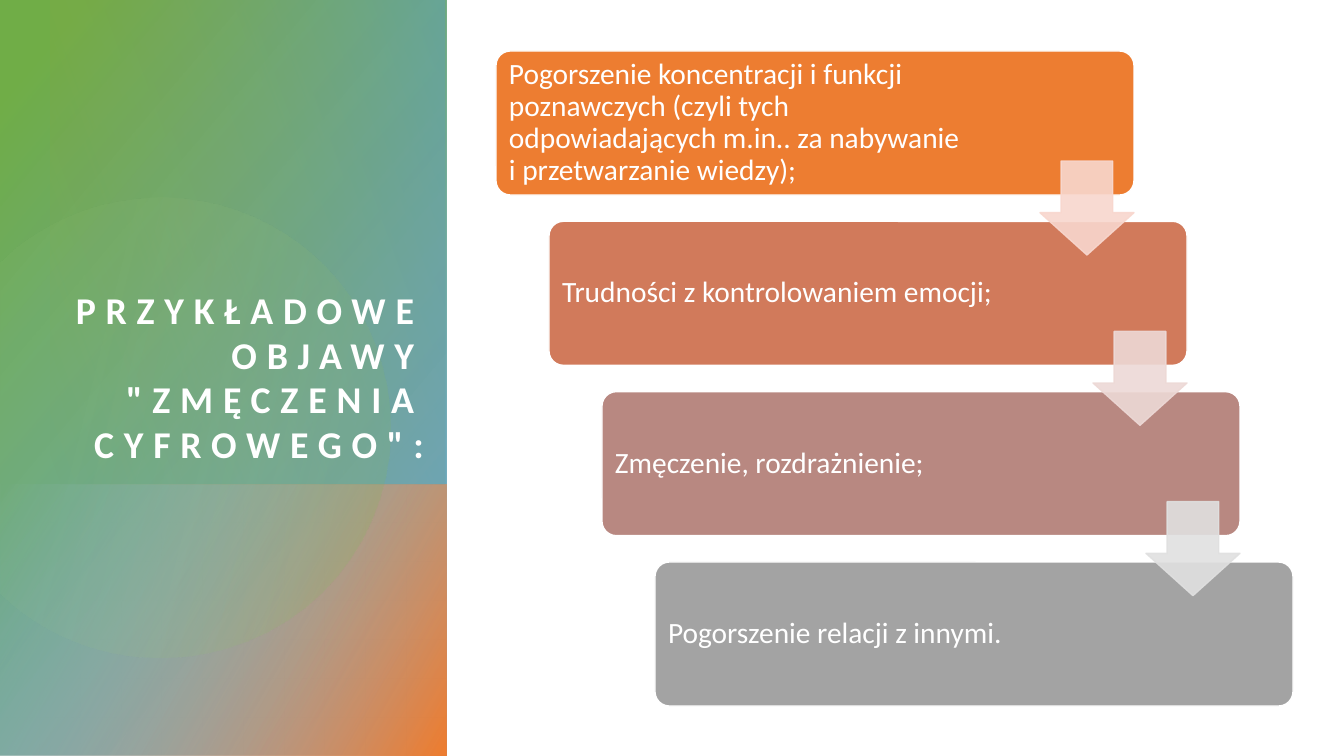
"""Build the slide on symptoms of digital fatigue: a gradient title panel and a staircase of four steps."""
import math

from pptx import Presentation
from pptx import util as u
from pptx.dml.color import RGBColor
from pptx.enum import shapes, text
from pptx.oxml import parse_xml
from pptx.oxml.ns import nsdecls, qn

WHITE = RGBColor(0xFF, 0xFF, 0xFF)
GREEN = RGBColor(0x70, 0xAD, 0x47)
PALE_GREEN = RGBColor(0xA9, 0xD1, 0x8E)
BLUE = RGBColor(0x5B, 0x9B, 0xD5)
PALE_BLUE = RGBColor(0x9D, 0xC3, 0xE6)
GOLD = RGBColor(0xCF, 0x9B, 0x00)
ORANGE = RGBColor(0xED, 0x7D, 0x31)
TERRACOTTA = RGBColor(0xD1, 0x7A, 0x5B)
ROSE = RGBColor(0xB8, 0x88, 0x81)
GREY = RGBColor(0xA3, 0xA3, 0xA3)
PALE_ORANGE = RGBColor(0xF8, 0xD7, 0xCE)
PALE_ROSE = RGBColor(0xED, 0xD9, 0xD6)
PALE_GREY = RGBColor(0xE0, 0xE0, 0xE0)

FONT = "Calibri"
TITLE = 'PRZYKŁADOWE OBJAWY "ZMĘCZENIA CYFROWEGO":'
TITLE_BOX = (50, 96, 374, 371)

# Each step: text, fill, text width, colour of the arrow to the next step
STEPS = [
    ("Pogorszenie koncentracji i funkcji poznawczych (czyli tych odpowiadających "
     "m.in.. za nabywanie i przetwarzanie wiedzy);", ORANGE, 471, PALE_ORANGE),
    ("Trudności z kontrolowaniem emocji;", TERRACOTTA, 483, PALE_ROSE),
    ("Zmęczenie, rozdrażnienie;", ROSE, 484, PALE_GREY),
    ("Pogorszenie relacji z innymi.", GREY, 483, None),
]
FIRST_STEP, LAST_STEP = (496, 51), (655, 562)
STEP_SIZE = (638, 144)
TEXT_MARGIN = 4
ARROW_OFFSET = (544, 110)
ARROW_SIZE = 94

# Each panel: visible box, rotation, gradient angle, stops of (position %, colour, opacity %)
LOWER_PANELS = [
    ((0, 0, 446, 756), 270, 50, [(8, GREEN, 100), (100, BLUE, 89)]),
    ((0, 485, 446, 271), 270, 60, [(0, PALE_BLUE, 0), (99, ORANGE, 100)]),
]
UPPER_PANEL = ((50, 0, 395, 485), 90, 110, [(0, BLUE, 29), (100, GOLD, 0)])

# Outline of the disc: single points are corners, triples are Bézier curves
DISC_START = (165, 198)
DISC_OUTLINE = [
    [(263, 200), (353, 265), (381, 365)],
    [(416, 487), (346, 615), (224, 649)],
    [(147, 671), (69, 652), (12, 605)],
    [(0, 594)], [(0, 263)], [(15, 249)],
    [(38, 231), (66, 216), (96, 207)],
    [(119, 201), (142, 198), (165, 198)],
]
DISC_CENTRE = (175, 424)
DISC_ROTATION = 343.9
DISC_ANGLE = 30
DISC_STOPS = [(36, PALE_GREEN, 6), (100, GREEN, 26)]
CURVE_PARTS = 16


def px(value):
    return u.Emu(round(value * 914400 / 100.8))


def set_opacity(shape, opacities):
    for colour, opacity in zip(shape.fill._xPr.iter(qn("a:srgbClr")), opacities):
        colour.append(parse_xml(f'<a:alpha {nsdecls("a")} val="{opacity * 1000}"/>'))


def set_gradient(shape, angle, stops):
    shape.shadow.inherit = False
    shape.line.fill.background()
    shape.fill.gradient()
    shape.fill.gradient_angle = 360 - angle
    for stop, (position, colour, _) in zip(shape.fill.gradient_stops, stops):
        stop.position = position / 100
        stop.color.rgb = colour
    set_opacity(shape, [opacity for _, _, opacity in stops])


def add_preset(slide, kind, left, top, width, height):
    return slide.shapes.add_shape(kind, px(left), px(top), px(width), px(height))


def add_panel(slide, box, rotation, angle, stops):
    left, top, width, height = box
    shift = (width - height) / 2
    panel = add_preset(slide, shapes.MSO_SHAPE.RECTANGLE, left + shift, top - shift, height, width)
    panel.rotation = rotation
    panel._element.spPr.find(qn("a:xfrm")).set("flipH", "1")
    set_gradient(panel, angle, stops)


def add_disc(slide):
    points = [DISC_START]
    for segment in DISC_OUTLINE:
        if len(segment) == 1:
            points += segment
            continue
        controls = [points[-1], *segment]
        for part in range(1, CURVE_PARTS + 1):
            t = part / CURVE_PARTS
            weights = [math.comb(3, k) * t**k * (1 - t)**(3 - k) for k in range(4)]
            points.append(tuple(sum(w * c[axis] for w, c in zip(weights, controls))
                                for axis in (0, 1)))
    turn = math.radians(360 - DISC_ROTATION)
    centre_x, centre_y = DISC_CENTRE
    outline = []
    for x, y in points:
        dx, dy = x - centre_x, y - centre_y
        outline.append((px(centre_x + dx * math.cos(turn) - dy * math.sin(turn)),
                        px(centre_y + dx * math.sin(turn) + dy * math.cos(turn))))
    builder = slide.shapes.build_freeform(*outline[0])
    builder.add_line_segments(outline[1:], close=True)
    disc = builder.convert_to_shape()
    disc.rotation = DISC_ROTATION
    set_gradient(disc, DISC_ANGLE, DISC_STOPS)


def add_text(slide, box, wording, size, anchor, inset):
    frame = slide.shapes.add_textbox(*map(px, box)).text_frame
    frame.word_wrap = True
    frame.vertical_anchor = anchor
    frame.margin_left = frame.margin_right = px(inset)
    frame.margin_top = frame.margin_bottom = px(inset)
    paragraph = frame.paragraphs[0]
    paragraph.text = wording
    paragraph.font.name = FONT
    paragraph.font.size = u.Pt(size)
    paragraph.font.color.rgb = WHITE
    return paragraph


def add_title(slide):
    paragraph = add_text(slide, TITLE_BOX, TITLE, 27, text.MSO_ANCHOR.BOTTOM, 0)
    paragraph.alignment = text.PP_ALIGN.RIGHT
    paragraph.line_spacing = 0.98
    paragraph.font.bold = True
    paragraph.runs[0].font._element.set("spc", "700")


def add_step(slide, left, top, wording, colour, text_width):
    width, height = STEP_SIZE
    step = add_preset(slide, shapes.MSO_SHAPE.ROUNDED_RECTANGLE, left, top, width, height)
    step.adjustments[0] = 0.1
    step.shadow.inherit = False
    step.fill.solid()
    step.fill.fore_color.rgb = colour
    step.line.color.rgb = WHITE
    step.line.width = u.Pt(1)
    box = (left + TEXT_MARGIN, top + TEXT_MARGIN, text_width, height - 2 * TEXT_MARGIN)
    paragraph = add_text(slide, box, wording, 21, text.MSO_ANCHOR.MIDDLE, 9)
    paragraph.line_spacing = 0.9


def add_arrow(slide, left, top, colour):
    arrow = add_preset(slide, shapes.MSO_SHAPE.DOWN_ARROW, left, top, ARROW_SIZE, ARROW_SIZE)
    arrow.adjustments[0] = 0.55
    arrow.adjustments[1] = 0.45
    arrow.shadow.inherit = False
    arrow.fill.solid()
    arrow.fill.fore_color.rgb = colour
    arrow.line.color.rgb = colour
    arrow.line.width = u.Pt(1)
    set_opacity(arrow, [90, 90])


def main():
    presentation = Presentation()
    presentation.slide_width, presentation.slide_height = px(1344), px(756)
    slide = presentation.slides.add_slide(presentation.slide_layouts[6])
    for panel in LOWER_PANELS:
        add_panel(slide, *panel)
    add_disc(slide)
    add_panel(slide, *UPPER_PANEL)
    add_title(slide)

    gaps = len(STEPS) - 1
    corners = [tuple(a + (b - a) * i / gaps for a, b in zip(FIRST_STEP, LAST_STEP))
               for i in range(len(STEPS))]
    for (left, top), (wording, colour, text_width, _) in zip(corners, STEPS):
        add_step(slide, left, top, wording, colour, text_width)
    for (left, top), (*_, arrow_colour) in zip(corners[:-1], STEPS):
        add_arrow(slide, left + ARROW_OFFSET[0], top + ARROW_OFFSET[1], arrow_colour)
    presentation.save("out.pptx")


if __name__ == "__main__":
    main()
